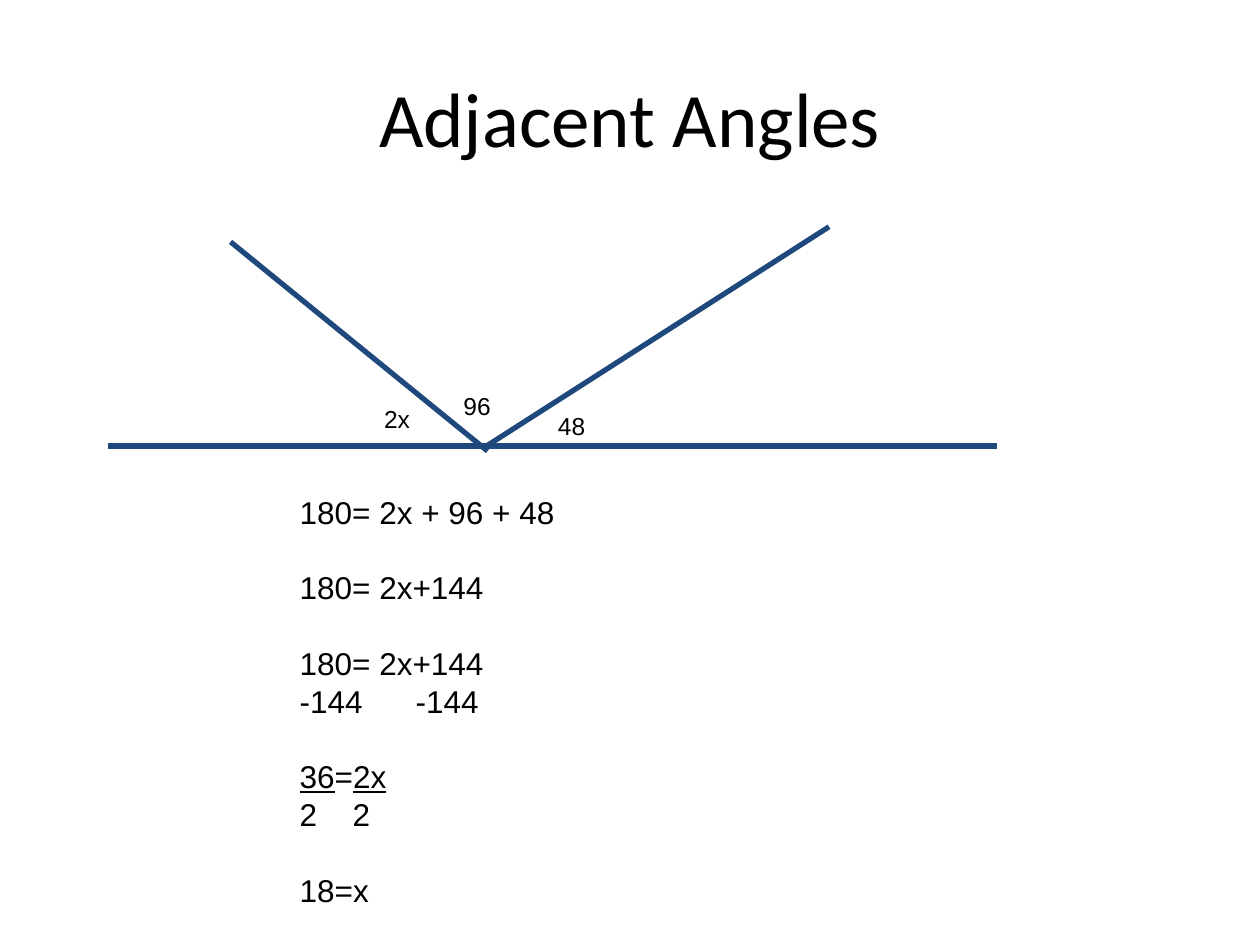
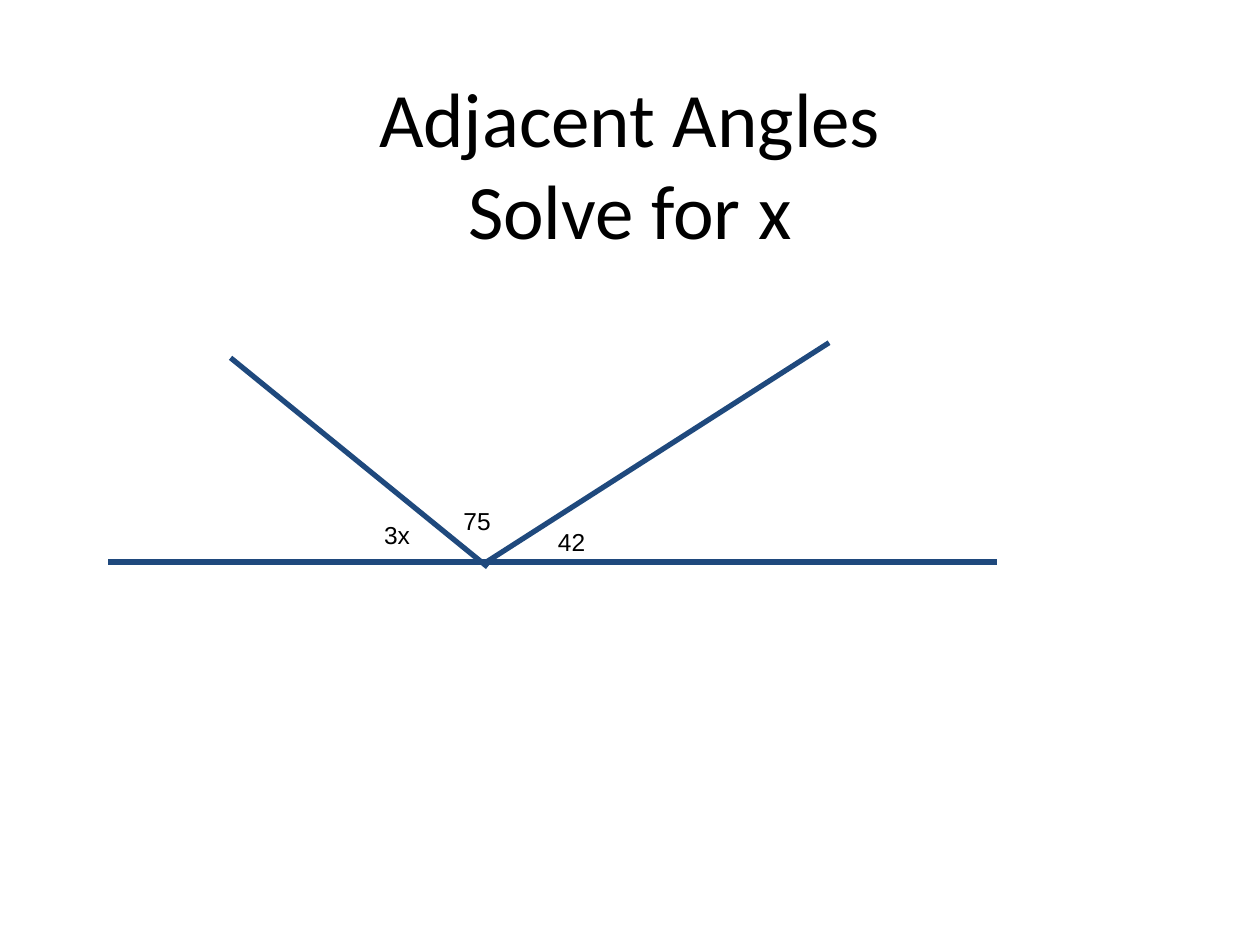
from lxml import etree
from pptx import Presentation
from pptx.dml.color import RGBColor
from pptx.enum.shapes import MSO_CONNECTOR
from pptx.enum.text import MSO_ANCHOR, PP_ALIGN
from pptx.oxml.ns import qn
from pptx.util import Inches, Pt

STRAIGHT = MSO_CONNECTOR.STRAIGHT
TOP = MSO_ANCHOR.TOP
MIDDLE = MSO_ANCHOR.MIDDLE
LEFT = PP_ALIGN.LEFT
CENTER = PP_ALIGN.CENTER

COLORS = {"text": "000000", "line": "1F497D", "background": "FFFFFF"}
TITLE_BOX = (0.5, 0.3, 9, 1.25)
TITLE_LINE = 0.73
LINE_HEIGHT = Pt(21.6)

BASE_TOP = 3.54
ANGLE_LINES = [
    (0.86, 0, 7.91, 0),
    (1.83, -1.62, 3.87, 0.04),
    (3.83, 0.02, 6.58, -1.74),
]
LABEL_BOXES = [
    (2.95, -0.43, 1.29, 0.29),
    (3.58, -0.54, 0.67, 0.4),
    (4.33, -0.38, 1.13, 0.2),
]
SLIDES = [
    {"subtitle": None, "shift": 0, "labels": ["2x", "96", "48"]},
    {"subtitle": "Solve for x", "shift": 0.92, "labels": ["3x", "75", "42"]},
]
EQUATIONS = [
    (["180= 2x + 96 + 48"], False, None),
    (["180= 2x+144"], True, None),
    (["180= 2x+144"], True, None),
    (["-144\t-144"], False, 0.92),
    (["36", "=", "2x"], True, None),
    (["2\t2"], False, 0.42),
    (["18=x"], True, None),
]
UNDERLINED = {"36", "2x"}


def prepare_frame(shape, box, anchor):
    shape.left, shape.top, shape.width, shape.height = map(Inches, box)
    frame = shape.text_frame
    frame.word_wrap = True
    frame.vertical_anchor = anchor
    frame.margin_left = frame.margin_right = Inches(0.1)
    frame.margin_top = frame.margin_bottom = Inches(0.1)
    return frame.paragraphs[0]


def add_run(paragraph, text, size, font, align=LEFT):
    paragraph.alignment = align
    run = paragraph.add_run()
    run.text = text
    run.font.size = Pt(size)
    run.font.name = font
    run.font.color.rgb = RGBColor.from_string(COLORS["text"])
    return run


presentation = Presentation()
presentation.slide_width = Inches(10)
presentation.slide_height = Inches(7.5)
title_only = presentation.slide_layouts[5]

for content in SLIDES:
    slide = presentation.slides.add_slide(title_only)
    slide.background.fill.solid()
    slide.background.fill.fore_color.rgb = RGBColor.from_string(COLORS["background"])
    paragraph = prepare_frame(slide.shapes.title, TITLE_BOX, MIDDLE)
    add_run(paragraph, "Adjacent Angles", 44, "Calibri", CENTER)

    if content["subtitle"]:
        left, top, width, height = TITLE_BOX
        shape = slide.shapes.add_textbox(0, 0, 0, 0)
        paragraph = prepare_frame(shape, (left, top + TITLE_LINE, width, height), MIDDLE)
        add_run(paragraph, content["subtitle"], 44, "Calibri", CENTER)

    base = BASE_TOP + content["shift"]
    for start_x, start_y, end_x, end_y in ANGLE_LINES:
        connector = slide.shapes.add_connector(
            STRAIGHT, Inches(start_x), Inches(base + start_y),
            Inches(end_x), Inches(base + end_y))
        connector.line.color.rgb = RGBColor.from_string(COLORS["line"])
        connector.line.width = Pt(3)
        properties = connector.element.find(qn("p:spPr"))
        etree.SubElement(properties, qn("a:effectLst"))

    for label, (left, offset, width, height) in zip(content["labels"], LABEL_BOXES):
        shape = slide.shapes.add_textbox(0, 0, 0, 0)
        paragraph = prepare_frame(shape, (left, base + offset, width, height), TOP)
        add_run(paragraph, label, 14, "Arial")

solution = presentation.slides[0].shapes.add_textbox(0, 0, 0, 0)
paragraph = prepare_frame(solution, (2.28, 3.81, 5.45, 3.44), TOP)
for index, (parts, gap_before, tab) in enumerate(EQUATIONS):
    if index:
        paragraph = solution.text_frame.add_paragraph()
    for part in parts:
        run = add_run(paragraph, part, 18, "Arial")
        run.font.underline = part in UNDERLINED
    paragraph.line_spacing = LINE_HEIGHT
    paragraph.space_before = LINE_HEIGHT if gap_before else Pt(0)
    if tab:
        properties = paragraph.runs[0].font and paragraph.line_spacing and paragraph._p.get_or_add_pPr()
        tabs = etree.SubElement(properties, qn("a:tabLst"))
        etree.SubElement(tabs, qn("a:tab"), pos=str(Inches(tab)), algn="l")

presentation.save("out.pptx")
